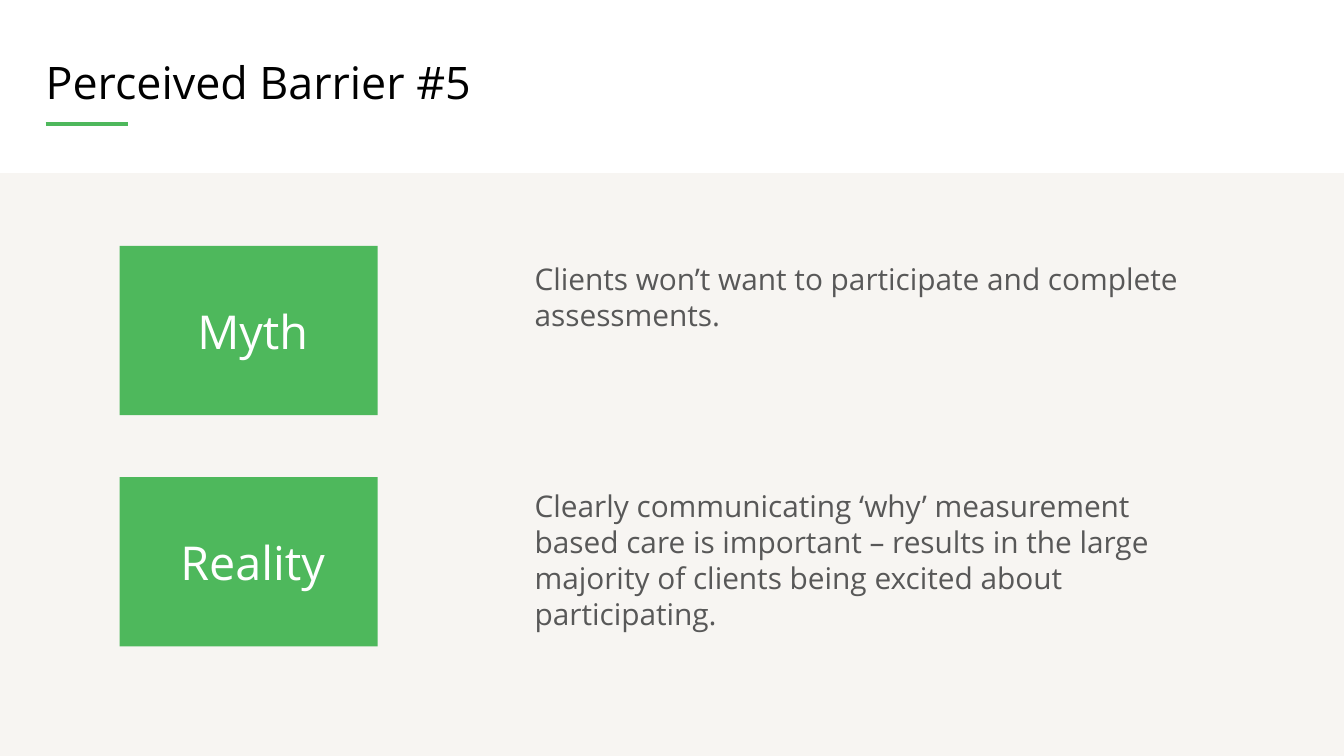
from pptx import Presentation
from pptx.dml.color import RGBColor as Rgb
from pptx.enum.shapes import MSO_CONNECTOR as Conn, MSO_SHAPE as Shape
from pptx.enum.text import PP_ALIGN as Align
from pptx.oxml.xmlchemy import OxmlElement as Tag
from pptx.util import Inches, Pt

WIDE = 10
HIGH = WIDE * 9 / 16
HUES = {"page": "F7F5F2", "white": "FFFFFF", "green": "4EB85C",
        "title": "000000", "body": "585858"}
FONT = "Open Sans"
ROWS = [
    ("Myth", 1.83, 1.84, 2.15, 0.73,
     "Clients won’t want to participate and complete assessments."),
    ("Reality", 3.55, 3.53, 3.87, 0.99,
     "Clearly communicating ‘why’ measurement based care is important – "
     "results in the large majority of clients being excited about "
     "participating."),
]


def hue(name):
    """Return a palette colour."""
    return Rgb.from_string(HUES[name])


def add_rect(slide, box, fill):
    """Add a plain filled rectangle."""
    rect = slide.shapes.add_shape(Shape.RECTANGLE, *map(Inches, box))
    rect.shadow.inherit = False
    rect.fill.solid()
    rect.fill.fore_color.rgb = hue(fill)
    rect.line.fill.background()
    return rect


def add_text(slide, box, text, size, color, inset=0.1, align=Align.LEFT):
    """Add a wrapped text box with one paragraph."""
    frame = slide.shapes.add_textbox(*map(Inches, box)).text_frame
    frame.word_wrap = True
    frame.margin_left = frame.margin_right = Inches(inset)
    frame.margin_top = frame.margin_bottom = Inches(inset)
    para = frame.paragraphs[0]
    para.text = text
    para.alignment = align
    para.font.name = FONT
    para.font.size = Pt(size)
    para.font.color.rgb = hue(color)


def add_header(slide, box):
    """Add the white band with its title and green rule."""
    left, top, _, _ = box
    band = add_rect(slide, box, "white")
    band.line.color.rgb = hue("white")
    band.line.width = Pt(0.75)
    x, y = left + 0.34, top + 0.92
    add_text(slide, (x, top + 0.41, 8.36, 0.4), "Perceived Barrier #5",
             24, "title", inset=0)
    rule = slide.shapes.add_connector(
        Conn.STRAIGHT, *map(Inches, (x, y, x + 0.61, y)))
    rule.line.color.rgb = hue("green")
    rule.line.width = Pt(2.25)
    rule._element.spPr.append(Tag("a:effectLst"))


def add_row(slide, left, row):
    """Add a green label card and the statement beside it."""
    label, top, text_top, label_top, height, text = row
    add_rect(slide, (left, top, 1.92, 1.26), "green")
    add_text(slide, (left + 2.99, text_top, 5.13, height), text, 16, "body")
    add_text(slide, (left + 0.29, label_top, 1.4, 0.62), label, 25, "white",
             align=Align.CENTER)


def main():
    """Build and save the slide."""
    deck = Presentation()
    deck.slide_width, deck.slide_height = Inches(WIDE), Inches(HIGH)
    slide = deck.slides.add_slide(deck.slide_layouts[6])
    add_rect(slide, (0, 0, WIDE, HIGH), "page")
    add_header(slide, (0, 0, WIDE, 1.28))
    for row in ROWS:
        add_row(slide, 0.89, row)
    deck.save("out.pptx")


if __name__ == "__main__":
    main()
